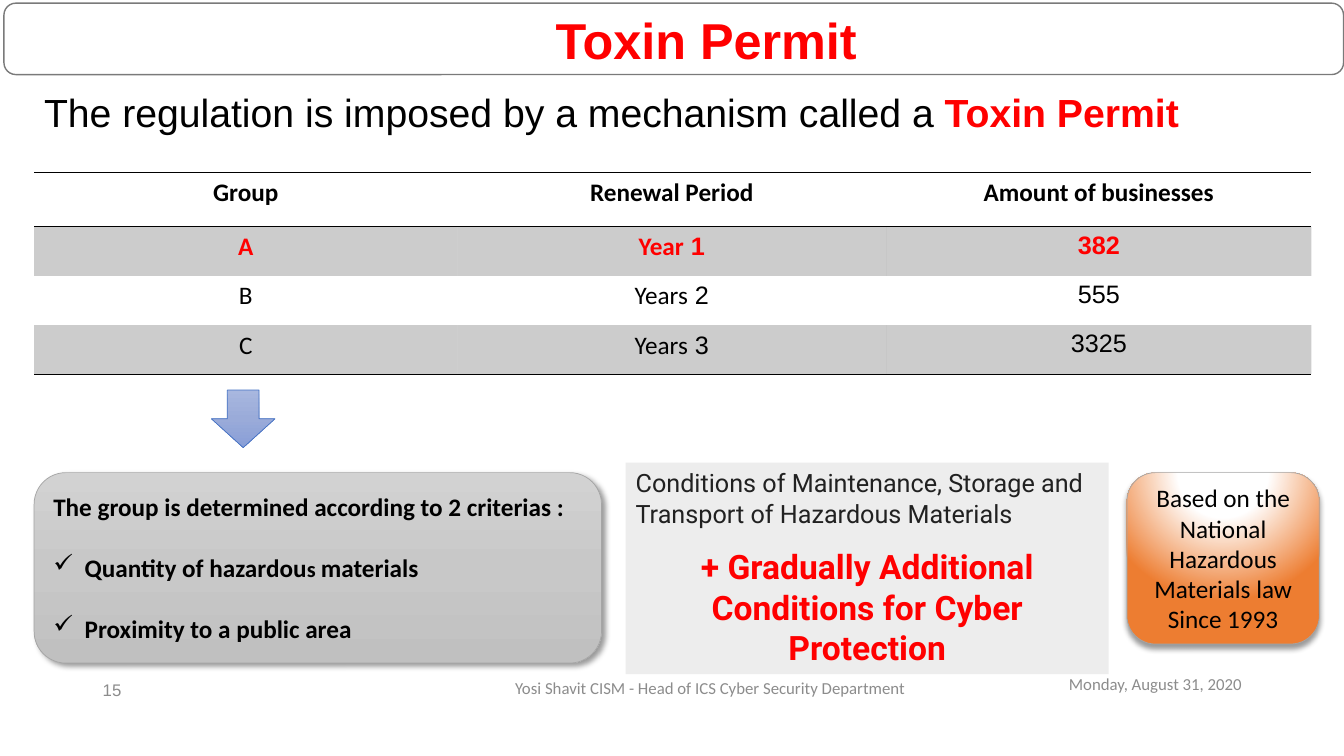
from dataclasses import dataclass

from lxml.etree import SubElement
from pptx import Presentation
from pptx.dml.color import RGBColor
from pptx.enum.shapes import MSO_SHAPE
from pptx.enum.text import MSO_ANCHOR, PP_ALIGN
from pptx.oxml import parse_xml
from pptx.oxml.ns import nsdecls, qn
from pptx.util import Cm, Pt

LEFT, CENTER, RIGHT = PP_ALIGN.LEFT, PP_ALIGN.CENTER, PP_ALIGN.RIGHT
NO_TABLE_STYLE = "{2D5ABB26-0587-4C30-8999-92F81FD0307C}"


@dataclass(frozen=True)
class Theme:
    black: str = "000000"
    white: str = "FFFFFF"
    red: str = "FF0000"
    footer_gray: str = "8C8C8C"
    frame_gray: str = "7A7A7A"
    edge_gray: str = "A5A5A5"
    panel: str = "EDEDED"
    panel_text: str = "212121"
    blue: str = "4472C4"
    blue_fade: tuple = ((0, "A8B7DF"), (50, "9AABD9"), (100, "889ED7"))
    gray_fade: tuple = ((0, "D2D2D2"), (50, "C8C8C8"), (100, "C0C0C0"))
    orange_glow: tuple = ((0, "FFFFFF"), (35, "FFFFFF"), (100, "ED7D31"))
    body_font: str = "Calibri"
    title_font: str = "Arial"
    panel_font: str = "Roboto"
    title: int = 36
    lead: int = 28
    accent: int = 24
    body: int = 18
    small: int = 16
    footer: int = 12


@dataclass
class Span:
    text: str
    size: int = Theme.body
    color: str = Theme.black
    bold: bool = False
    font: str = Theme.body_font


@dataclass
class Para:
    spans: list
    align: PP_ALIGN = LEFT
    rtl: bool = False
    bullet: str = ""
    before: int = 0


class SlideBuilder:
    def __init__(self, page, theme):
        self.page = page
        self.theme = theme

    def add_paras(self, frame, paras):
        for index, para in enumerate(paras):
            paragraph = frame.add_paragraph() if index else frame.paragraphs[0]
            properties = paragraph._p.get_or_add_pPr()
            if para.rtl:
                properties.set("rtl", "1")
            if para.bullet:
                properties.set("marL", str(Cm(0.79)))
                properties.set("indent", str(-Cm(0.79)))
                SubElement(properties, qn("a:buChar"), char=para.bullet)
            paragraph.alignment = para.align
            if para.before:
                paragraph.space_before = Pt(para.before)
            for span in para.spans:
                run = paragraph.add_run()
                run.text = span.text
                run.font.name = span.font
                run.font.size = Pt(span.size)
                run.font.bold = span.bold
                run.font.color.rgb = RGBColor.from_string(span.color)
                if para.rtl:
                    SubElement(run._r.rPr, qn("a:cs"), typeface=self.theme.title_font)

    def text(self, place, paras, anchor=MSO_ANCHOR.TOP, wrap=True):
        box = self.page.shapes.add_textbox(*map(Cm, place))
        box.text_frame.word_wrap = wrap
        box.text_frame.vertical_anchor = anchor
        self.add_paras(box.text_frame, paras)

    def shape(self, kind, place, fill, line=None, width=0.5, paras=(),
              anchor=MSO_ANCHOR.MIDDLE, glow=False, shadow_angle=None):
        """Draw a preset shape; fill is one colour or a tuple of gradient stops."""
        shape = self.page.shapes.add_shape(kind, *map(Cm, place))
        shape.shadow.inherit = False
        if isinstance(fill, str):
            shape.fill.solid()
            shape.fill.fore_color.rgb = RGBColor.from_string(fill)
        else:
            self.gradient(shape, fill, glow)
        if line:
            shape.line.color.rgb = RGBColor.from_string(line)
            shape.line.width = Pt(width)
        else:
            shape.line.fill.background()
        if shadow_angle is not None:
            self.shadow(shape, shadow_angle)
        shape.text_frame.word_wrap = True
        shape.text_frame.vertical_anchor = anchor
        self.add_paras(shape.text_frame, paras)

    def gradient(self, shape, stops, glow):
        """Fade downwards, or outwards from above the shape when glow is set."""
        marks = "".join(f'<a:gs pos="{at * 1000}"><a:srgbClr val="{color}"/></a:gs>'
                        for at, color in stops)
        course = ('<a:path path="circle"><a:fillToRect l="50000" t="-80000" '
                  'r="50000" b="180000"/></a:path>' if glow
                  else '<a:lin ang="5400000" scaled="0"/>')
        fade = parse_xml(f'<a:gradFill {nsdecls("a")} rotWithShape="1">'
                         f'<a:gsLst>{marks}</a:gsLst>{course}</a:gradFill>')
        shape._element.spPr.find(qn("a:prstGeom")).addnext(fade)

    def shadow(self, shape, angle):
        effects = shape._element.spPr.find(qn("a:effectLst"))
        effects.append(parse_xml(
            f'<a:outerShdw {nsdecls("a")} blurRad="{Pt(4)}" dist="{Pt(3)}" '
            f'dir="{angle * 60000}" rotWithShape="0"><a:srgbClr val="{self.theme.black}">'
            '<a:alpha val="40000"/></a:srgbClr></a:outerShdw>'))

    def cell_border(self, cell, side):
        border = parse_xml(
            f'<a:{side} {nsdecls("a")} w="{Pt(1)}"><a:solidFill>'
            f'<a:srgbClr val="{self.theme.black}"/></a:solidFill></a:{side}>')
        cell._tc.get_or_add_tcPr().append(border)

    def table(self, place, widths, heights, rows, accent_row):
        """Draw a table with a ruled header, shaded odd rows and one red row."""
        theme = self.theme
        size = (sum(widths), sum(heights))
        holder = self.page.shapes.add_table(len(rows), len(widths),
                                            *map(Cm, place + size))
        table = holder.table
        table.first_row = table.horz_banding = False
        table._tbl.tblPr.find(qn("a:tableStyleId")).text = NO_TABLE_STYLE
        for column, width in zip(table.columns, widths):
            column.width = Cm(width)
        for r, (row, height) in enumerate(zip(rows, heights)):
            table.rows[r].height = Cm(height)
            for c, text in enumerate(row):
                cell = table.cell(r, c)
                if r == 0:
                    self.cell_border(cell, "lnT")
                if r in (0, len(rows) - 1):
                    self.cell_border(cell, "lnB")
                if r % 2:
                    cell.fill.solid()
                    cell.fill.fore_color.rgb = RGBColor.from_string(theme.black)
                    tint = cell._tc.tcPr.find(qn("a:solidFill"))[0]
                    SubElement(tint, qn("a:alpha"), val="20000")
                else:
                    cell.fill.background()
                color = theme.red if r == accent_row else theme.black
                span = Span(text, color=color, bold=r in (0, accent_row))
                self.add_paras(cell.text_frame, [Para([span], CENTER, rtl=True)])


def main():
    theme = Theme()
    deck = Presentation()
    deck.slide_width, deck.slide_height = Cm(33.87), Cm(19.05)
    slide = SlideBuilder(deck.slides.add_slide(deck.slide_layouts[6]), theme)
    rounded = MSO_SHAPE.ROUNDED_RECTANGLE

    slide.shape(rounded, (0.1, 0.08, 33.76, 1.8), theme.white, theme.frame_gray, 1)
    for place, text, align in (
        ((12.5, 17.09, 10.8, 0.5),
         "Yosi Shavit CISM - Head of ICS Cyber Security Department", CENTER),
        ((2.34, 16.87, 7.62, 1.02), "15", LEFT),
        ((23.65, 16.71, 7.9, 1.02), "Monday, August 31, 2020", RIGHT),
    ):
        span = Span(text, theme.footer, theme.footer_gray)
        slide.text(place, [Para([span], align, rtl=True)], MSO_ANCHOR.MIDDLE)

    slide.text((0.86, 2.11, 30.28, 1.45), [Para([
        Span("The regulation is imposed by a mechanism called a ",
             theme.lead, font=theme.title_font),
        Span("Toxin Permit", theme.lead, theme.red, True, theme.title_font)])])
    slide.table((0.86, 4.34), (10.67, 10.8, 10.72), (1.37, 1.24, 1.24, 1.24), (
        ("Group", "Renewal Period", "Amount of businesses"),
        ("A", "1 Year", "382"),
        ("B", "2 Years", "555"),
        ("C", "3 Years", "3325")), accent_row=1)

    law = Span("Based on the National Hazardous Materials law Since 1993")
    slide.shape(rounded, (28.4, 11.91, 4.85, 4.32), theme.orange_glow, theme.edge_gray,
                paras=[Para([law], CENTER, rtl=True)], glow=True, shadow_angle=90)
    slide.shape(MSO_SHAPE.DOWN_ARROW, (5.33, 9.83, 1.6, 1.45),
                theme.blue_fade, theme.blue)
    slide.shape(rounded, (0.86, 11.91, 14.3, 4.8), theme.gray_fade, theme.edge_gray, paras=[
        Para([Span("The group is determined according to 2 criterias :", bold=True)]),
        Para([Span("Quantity of hazardou", bold=True),
              Span("s ", theme.small, bold=True),
              Span("materials", bold=True)], bullet="✓", before=22),
        Para([Span("Proximity to a public area", bold=True)], bullet="✓", before=22),
    ], shadow_angle=45)
    slide.shape(MSO_SHAPE.RECTANGLE, (15.77, 11.66, 12.17, 5.33), theme.panel, paras=[
        Para([Span("Conditions of Maintenance, Storage and Transport of Hazardous Materials",
                   color=theme.panel_text, font=theme.panel_font)], rtl=True),
        Para([Span("+ Gradually Additional Conditions for Cyber Protection",
                   theme.accent, theme.red, True, theme.panel_font)], CENTER, before=13),
    ], anchor=MSO_ANCHOR.TOP)
    slide.text((13.67, 0.1, 8.18, 1.8), [Para([
        Span("Toxin Permit", theme.title, theme.red, True, theme.title_font)],
        RIGHT, rtl=True)], wrap=False)
    deck.save("out.pptx")


if __name__ == "__main__":
    main()
